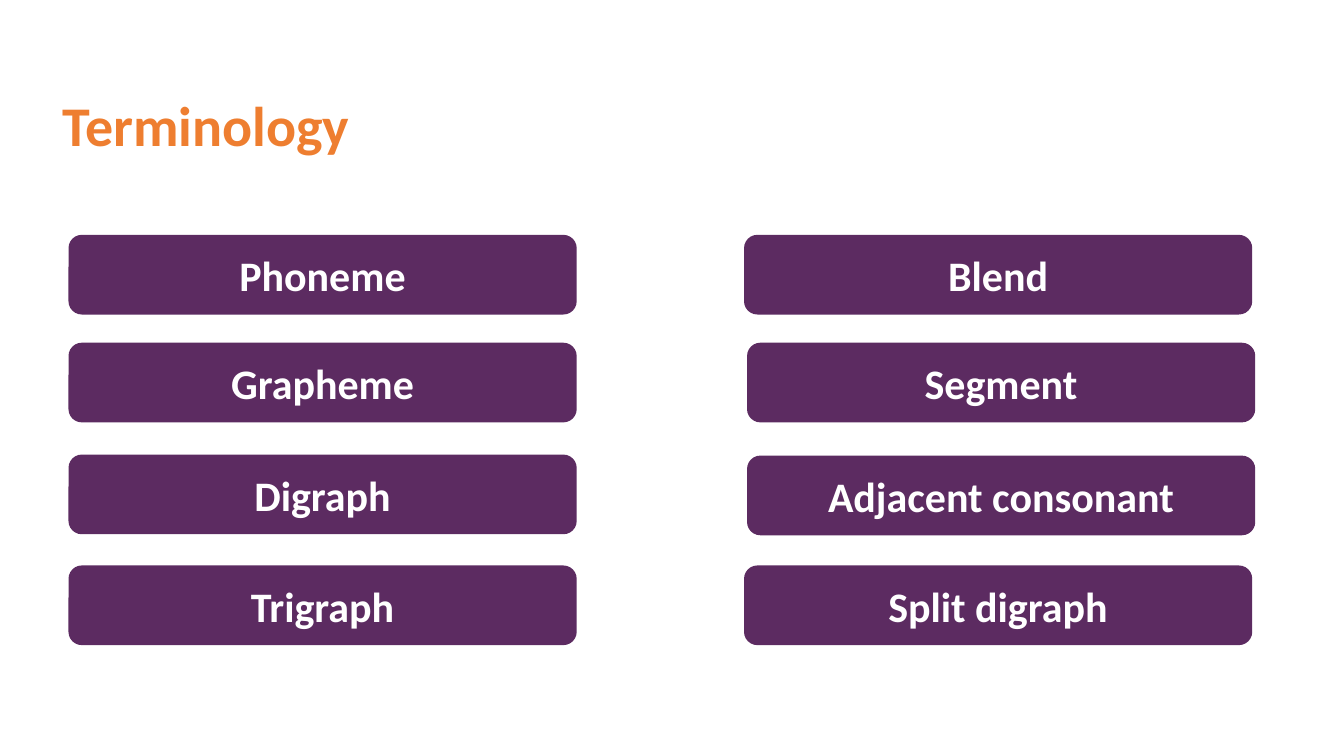
from dataclasses import dataclass

from pptx import Presentation
from pptx.dml.color import RGBColor as RGB
from pptx.enum.shapes import MSO_SHAPE as Shape
from pptx.enum.text import MSO_ANCHOR as Anchor, PP_ALIGN as Align
from pptx.util import Inches, Pt


@dataclass(frozen=True)
class Theme:
    font: str = "Calibri"
    title_color: RGB = RGB(0xEE, 0x7E, 0x30)
    card_fill: RGB = RGB(0x5C, 0x2B, 0x61)
    card_color: RGB = RGB(0xFF, 0xFF, 0xFF)
    title_size: int = 40
    card_size: int = 30


def write(tf, text, *, font, size, color, anchor, align=Align.LEFT, spacing=1.0):
    tf.word_wrap = True
    tf.vertical_anchor = anchor
    p = tf.paragraphs[0]
    p.alignment = align
    p.line_spacing = spacing
    r = p.add_run()
    r.text = text
    r.font.name = font
    r.font.size = Pt(size)
    r.font.bold = True
    r.font.color.rgb = color


class Deck:
    def __init__(self, theme):
        self.theme = theme
        self.prs = Presentation()
        self.prs.slide_width = Inches(13.33)
        self.prs.slide_height = Inches(7.5)
        self.s = self.prs.slides.add_slide(self.prs.slide_layouts[6])

    def title(self, text, x, y, w, h):
        t = self.theme
        sp = self.s.shapes.add_textbox(Inches(x), Inches(y), Inches(w), Inches(h))
        write(sp.text_frame, text, font=t.font, size=t.title_size,
              color=t.title_color, anchor=Anchor.BOTTOM, spacing=0.9)

    def card(self, text, x, y, w, h):
        t = self.theme
        sp = self.s.shapes.add_shape(
            Shape.ROUNDED_RECTANGLE, Inches(x), Inches(y), Inches(w), Inches(h))
        sp.shadow.inherit = False
        sp.fill.solid()
        sp.fill.fore_color.rgb = t.card_fill
        sp.line.fill.background()
        write(sp.text_frame, text, font=t.font, size=t.card_size,
              color=t.card_color, anchor=Anchor.MIDDLE, align=Align.CENTER)


CARD_W, CARD_H = 5.04, 0.79
LEFT_X = 0.68
TERM_ROWS = [
    (2.33, "Phoneme", 7.38, 2.33, "Blend"),
    (3.4, "Grapheme", 7.41, 3.4, "Segment"),
    (4.51, "Digraph", 7.41, 4.52, "Adjacent consonant"),
    (5.61, "Trigraph", 7.38, 5.61, "Split digraph"),
]


def main():
    deck = Deck(Theme())
    deck.title("Terminology", 0.52, 0.36, 10.71, 1.26)
    for left_y, left_term, right_x, right_y, right_term in TERM_ROWS:
        deck.card(left_term, LEFT_X, left_y, CARD_W, CARD_H)
        deck.card(right_term, right_x, right_y, CARD_W, CARD_H)
    deck.prs.save("out.pptx")


if __name__ == "__main__":
    main()
